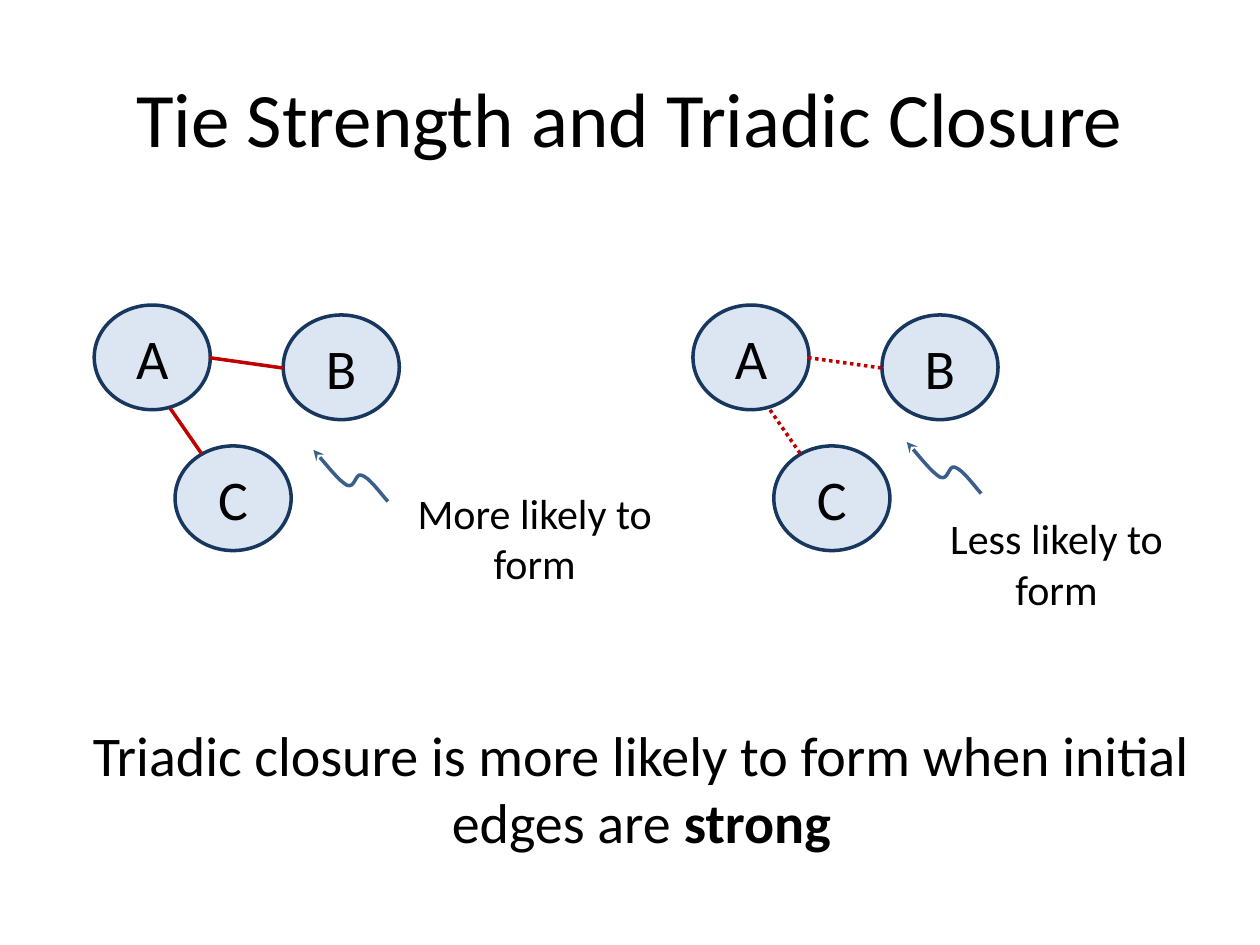
from typing import NamedTuple

from lxml import etree
from pptx import Presentation
from pptx.dml.color import RGBColor
from pptx.enum.dml import MSO_LINE
from pptx.enum.shapes import MSO_CONNECTOR, MSO_SHAPE
from pptx.enum.text import MSO_ANCHOR, MSO_AUTO_SIZE, PP_ALIGN
from pptx.oxml.ns import qn
from pptx.util import Cm, Pt

OVAL = MSO_SHAPE.OVAL
STRAIGHT = MSO_CONNECTOR.STRAIGHT
DOTTED = MSO_LINE.ROUND_DOT
CENTER = PP_ALIGN.CENTER
MIDDLE = MSO_ANCHOR.MIDDLE
GROW = MSO_AUTO_SIZE.SHAPE_TO_FIT_TEXT

BLACK = RGBColor(0x00, 0x00, 0x00)
PALE_BLUE = RGBColor(0xDC, 0xE6, 0xF2)
NAVY = RGBColor(0x17, 0x37, 0x5E)
STEEL = RGBColor(0x3A, 0x5F, 0x8C)
RED = RGBColor(0xC0, 0x00, 0x00)

FONT = "Calibri"
LINE_WIDTH = Pt(2)
NODE_WIDTH, NODE_HEIGHT = 2.34, 2.11


class Node(NamedTuple):
    name: str
    left: float
    top: float


class Edge(NamedTuple):
    x1: float
    y1: float
    x2: float
    y2: float


class Label(NamedTuple):
    text: str
    left: float
    top: float


class Triad(NamedTuple):
    left: float
    dotted: bool
    squiggle_x: float
    squiggle_y: float
    label: Label


NODES = [Node("A", 0, 0), Node("C", 1.63, 2.84), Node("B", 3.81, 0.2)]
EDGES = [Edge(2.32, 1.06, 3.81, 1.27), Edge(2.16, 2.99, 1.53, 2.08)]
TRIAD_TOP = 6.15
SQUIGGLE = [
    (-0.2, -0.23), (-0.38, -0.48), (-0.53, -0.53),
    (-0.66, -0.58), (-0.66, -0.25), (-0.83, -0.33),
    (-0.99, -0.43), (-1.24, -0.74), (-1.5, -1.04),
]
TRIADS = [
    Triad(1.9, False, 7.82, 10.11, Label("More likely to form", 7.82, 9.7)),
    Triad(13.97, True, 19.78, 9.95, Label("Less likely to form", 18.34, 10.21)),
]


def style_paragraph(paragraph, size: int) -> None:
    paragraph.alignment = CENTER
    paragraph.font.name = FONT
    paragraph.font.size = Pt(size)
    paragraph.font.color.rgb = BLACK


def add_text(shapes, left: float, top: float, width: float, height: float,
             text: str, size: int):
    box = shapes.add_textbox(Cm(left), Cm(top), Cm(width), Cm(height))
    box.text_frame.word_wrap = True
    box.text_frame.auto_size = GROW
    paragraph = box.text_frame.paragraphs[0]
    paragraph.add_run().text = text
    style_paragraph(paragraph, size)
    return paragraph


def add_node(shapes, node: Node, left: float) -> None:
    oval = shapes.add_shape(OVAL, Cm(left + node.left), Cm(TRIAD_TOP + node.top),
                            Cm(NODE_WIDTH), Cm(NODE_HEIGHT))
    oval.shadow.inherit = False
    oval.fill.solid()
    oval.fill.fore_color.rgb = PALE_BLUE
    oval.line.color.rgb = NAVY
    oval.line.width = LINE_WIDTH
    oval.text_frame.vertical_anchor = MIDDLE
    oval.text_frame.text = node.name
    style_paragraph(oval.text_frame.paragraphs[0], 32)


def add_edge(shapes, edge: Edge, left: float, dotted: bool) -> None:
    tie = shapes.add_connector(
        STRAIGHT, Cm(left + edge.x1), Cm(TRIAD_TOP + edge.y1),
        Cm(left + edge.x2), Cm(TRIAD_TOP + edge.y2))
    tie.line.color.rgb = RED
    tie.line.width = LINE_WIDTH
    if dotted:
        tie.line.dash_style = DOTTED
    etree.SubElement(tie._element.spPr, qn("a:effectLst"))


def add_squiggle(shapes, x: float, y: float) -> None:
    builder = shapes.build_freeform(Cm(x), Cm(y))
    builder.add_line_segments(
        [(Cm(x + dx), Cm(y + dy)) for dx, dy in SQUIGGLE], close=False)
    arrow = builder.convert_to_shape()
    arrow.shadow.inherit = False
    arrow.fill.background()
    arrow.line.color.rgb = STEEL
    arrow.line.width = LINE_WIDTH
    etree.SubElement(arrow.line._get_or_add_ln(), qn("a:tailEnd"), type="stealth")

    outline = arrow._element.xpath(".//a:path")[0]
    segments = outline.findall(qn("a:lnTo"))
    for first in range(0, len(segments), 3):
        curve = etree.SubElement(outline, qn("a:cubicBezTo"))
        for segment in segments[first:first + 3]:
            curve.append(segment[0])
            outline.remove(segment)


def add_triad(shapes, triad: Triad) -> None:
    members = shapes.add_group_shape().shapes
    for node in NODES:
        add_node(members, node, triad.left)
    for edge in EDGES:
        add_edge(members, edge, triad.left, triad.dotted)
    add_squiggle(shapes, triad.squiggle_x, triad.squiggle_y)
    add_text(shapes, triad.label.left, triad.label.top, 5.92, 2.31,
             triad.label.text, 24)


def main() -> None:
    presentation = Presentation()
    presentation.slide_width = Cm(25.4)
    presentation.slide_height = Cm(19.05)
    slide = presentation.slides.add_slide(presentation.slide_layouts[5])

    title = slide.shapes.title
    title.left, title.top = Cm(1.27), Cm(0.76)
    title.width, title.height = Cm(22.86), Cm(3.18)
    title.text_frame.text = "Tie Strength and Triadic Closure"
    title.text_frame.vertical_anchor = MIDDLE
    style_paragraph(title.text_frame.paragraphs[0], 44)

    for triad in TRIADS:
        add_triad(slide.shapes, triad)

    conclusion = add_text(
        slide.shapes, 1.6, 14.4, 22.66, 3,
        "Triadic closure is more likely to form when initial edges are ", 32)
    emphasis = conclusion.add_run()
    emphasis.text = "strong"
    emphasis.font.bold = True

    presentation.save("out.pptx")


if __name__ == "__main__":
    main()
